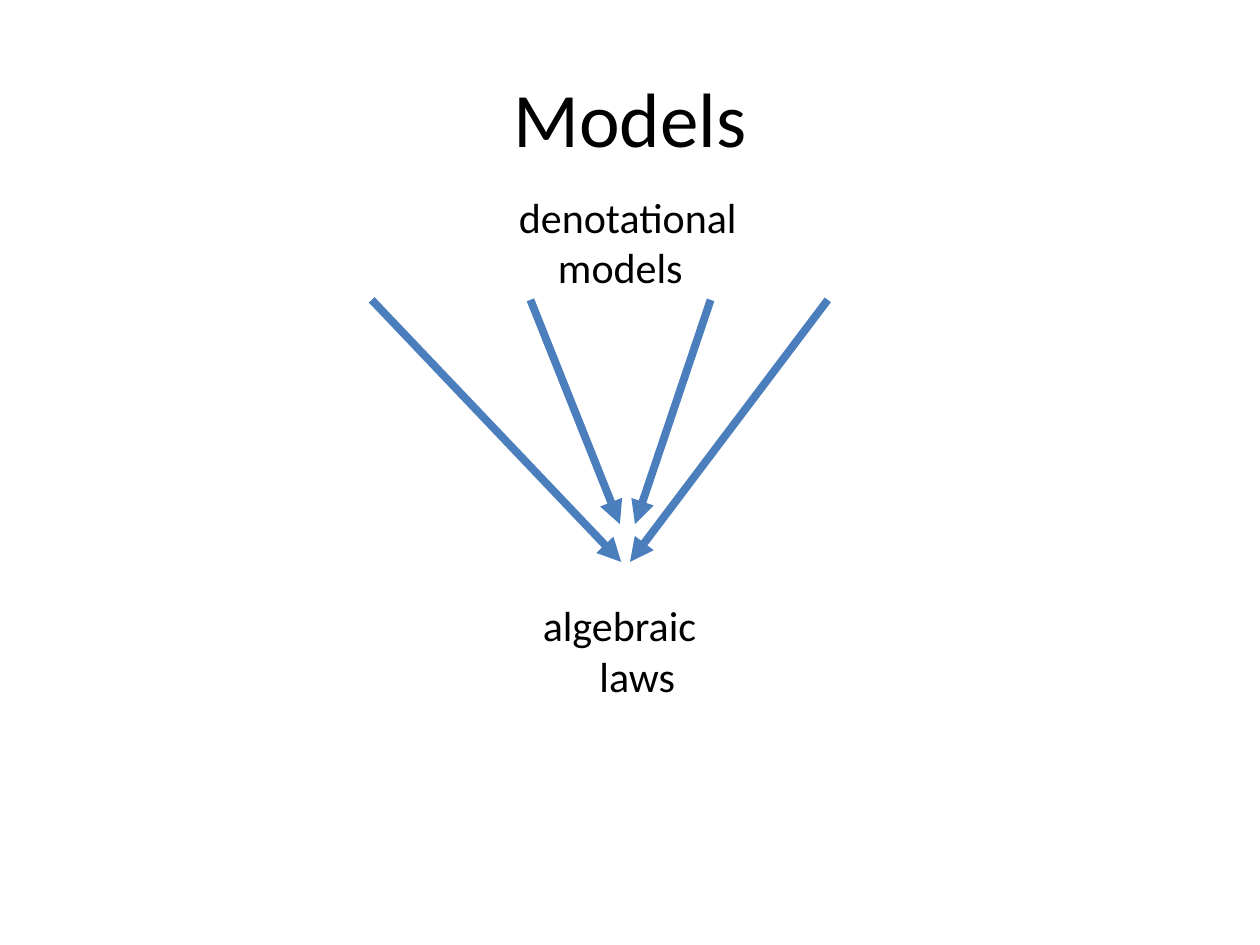
"""Build a slide on denotational models converging on algebraic laws."""
from lxml import etree
from pptx import Presentation
from pptx.dml.color import RGBColor
from pptx.enum.shapes import MSO_CONNECTOR
from pptx.enum.text import MSO_ANCHOR, MSO_AUTO_SIZE, PP_ALIGN
from pptx.oxml.ns import qn
from pptx.util import Inches, Pt

STRAIGHT = MSO_CONNECTOR.STRAIGHT
MIDDLE = MSO_ANCHOR.MIDDLE
FIT_SHAPE = MSO_AUTO_SIZE.SHAPE_TO_FIT_TEXT
LEFT, CENTER = PP_ALIGN.LEFT, PP_ALIGN.CENTER
BLACK = RGBColor(0x00, 0x00, 0x00)
BLUE = RGBColor(0x4B, 0x7E, 0xBC)

TITLE = "Models"
TITLE_AREA = (0.5, 0.3, 9, 1.25)
LABELS = [
    {"area": (4.02, 1.47, 1.95, 0.91),
     "lines": [("denotational", 0), ("models", 0.31)]},
    {"area": (4.21, 4.71, 1.43, 0.91),
     "lines": [("algebraic", 0), ("laws", 0.45)]},
]
ARROW_TOP = 2.38
ARROWS = [(2.95, 4.93, 4.46), (5.64, 5.04, 4.16),
          (6.57, 5, 4.46), (4.21, 4.92, 4.16)]


def format_text(para, size, alignment):
    para.alignment = alignment
    values = {"name": "Calibri", "size": Pt(size)}
    for name, value in values.items():
        setattr(para.font, name, value)
    para.font.color.rgb = BLACK


def add_title(page):
    title = page.shapes.title
    places = zip(("left", "top", "width", "height"), TITLE_AREA)
    for name, value in places:
        setattr(title, name, Inches(value))
    frame = title.text_frame
    frame.text = TITLE
    frame.vertical_anchor = MIDDLE
    format_text(frame.paragraphs[0], 44, CENTER)


def add_label(page, area, lines):
    box = page.shapes.add_textbox(*map(Inches, area))
    frame = box.text_frame
    frame.word_wrap = False
    frame.auto_size = FIT_SHAPE
    frame.text = "\n".join(text for text, _ in lines)
    for para, (_, indent) in zip(frame.paragraphs, lines):
        format_text(para, 24, LEFT)
        para._p.get_or_add_pPr().set("marL", str(Inches(indent)))


def add_arrow(page, start_x, end_x, end_y):
    ends = map(Inches, (start_x, ARROW_TOP, end_x, end_y))
    arrow = page.shapes.add_connector(STRAIGHT, *ends)
    arrow.line.color.rgb = BLUE
    arrow.line.width = Pt(4.5)
    etree.SubElement(arrow.line._get_or_add_ln(), qn("a:tailEnd"), type="triangle")
    etree.SubElement(arrow._element.spPr, qn("a:effectLst"))


def main():
    deck = Presentation()
    deck.slide_width, deck.slide_height = Inches(10), Inches(7.5)
    page = deck.slides.add_slide(deck.slide_layouts.get_by_name("Title Only"))
    add_title(page)
    for label in LABELS:
        add_label(page, **label)
    for arrow in ARROWS:
        add_arrow(page, *arrow)
    deck.save("out.pptx")


if __name__ == "__main__":
    main()
